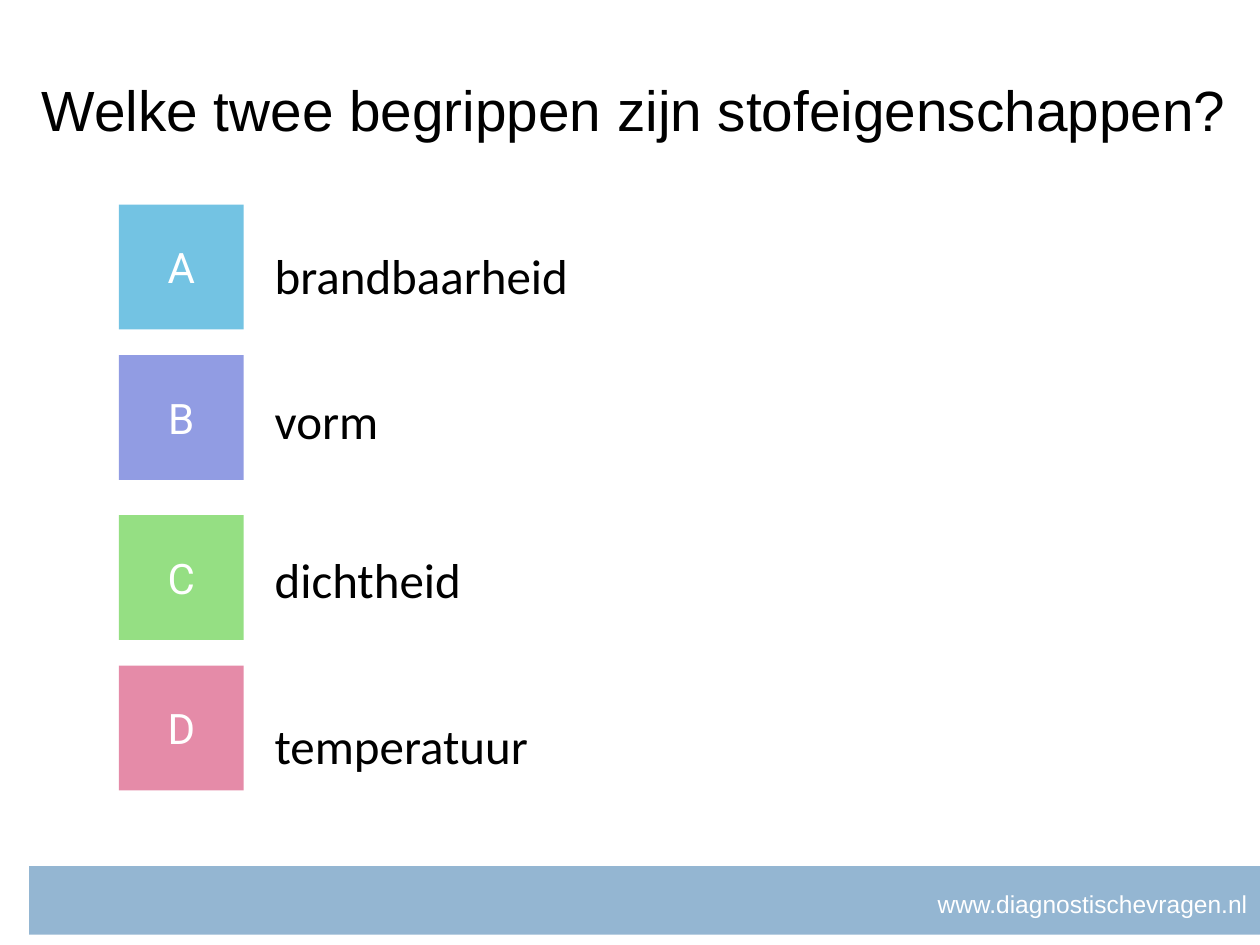
from dataclasses import dataclass

from pptx import Presentation
from pptx.dml.color import RGBColor
from pptx.enum.shapes import MSO_SHAPE
from pptx.enum.text import MSO_ANCHOR, PP_ALIGN
from pptx.util import Pt

RECT = MSO_SHAPE.RECTANGLE
TOP, MIDDLE = MSO_ANCHOR.TOP, MSO_ANCHOR.MIDDLE
LEFT, CENTER, RIGHT = PP_ALIGN.LEFT, PP_ALIGN.CENTER, PP_ALIGN.RIGHT


@dataclass(frozen=True)
class Theme:
    ink: str = "000000"
    paper: str = "FFFFFF"
    band: str = "94B6D2"
    tiles: tuple = ("73C3E3", "919CE3", "95DF83", "E58BA8")
    head: tuple = ("Arial", 32.4)
    answer: tuple = ("Calibri", 28)
    letter: tuple = ("Roboto", 24)
    site: tuple = ("Arial", 14)


class Deck:
    """Holds the theme and the slide being drawn; lengths are in points."""

    def __init__(self, theme):
        self.theme = theme
        self.file = Presentation()
        self.file.slide_width, self.file.slide_height = Pt(720), Pt(540)
        self.slide = self.file.slides.add_slide(self.file.slide_layouts[5])

    def set_text(self, shape, text, style, color, align=LEFT, anchor=MIDDLE,
                 inset=(7.2, 3.6), space=None):
        """Fill a shape with one line; inset is (sides, top and bottom)."""
        frame = shape.text_frame
        frame.text = text
        frame.word_wrap = True
        frame.vertical_anchor = anchor
        frame.margin_left = frame.margin_right = Pt(inset[0])
        frame.margin_top = frame.margin_bottom = Pt(inset[1])
        line = frame.paragraphs[0]
        line.alignment = align
        if space:
            line.line_spacing = space
        font = line.runs[0].font
        font.name, font.size = style[0], Pt(style[1])
        font.color.rgb = RGBColor.from_string(color)

    def title(self, text, x, y, w, h):
        shape = self.slide.shapes.title
        shape.left, shape.top, shape.width, shape.height = map(Pt, (x, y, w, h))
        self.set_text(shape, text, self.theme.head, self.theme.ink,
                      anchor=TOP, inset=(7.2, 7.6), space=1.11)

    def block(self, x, y, w, h, fill):
        shape = self.slide.shapes.add_shape(RECT, *map(Pt, (x, y, w, h)))
        shape.shadow.inherit = False
        shape.fill.solid()
        shape.fill.fore_color.rgb = RGBColor.from_string(fill)
        shape.line.fill.background()
        return shape

    def tile(self, letter, x, y, side, fill):
        self.set_text(self.block(x, y, side, side, fill), letter,
                      self.theme.letter, self.theme.paper, CENTER)

    def label(self, text, x, y, w, h, style, color, **form):
        box = self.slide.shapes.add_textbox(*map(Pt, (x, y, w, h)))
        self.set_text(box, text, style, color, **form)


def main():
    theme = Theme()
    deck = Deck(theme)
    deck.block(16.6, 494.9, 703.4, 39.2, theme.band)
    deck.title("Welke twee begrippen zijn stofeigenschappen?",
               16.6, 31, 703.4, 67.7)

    # letter, answer, top of tile, top of answer
    rows = (
        ("A", "brandbaarheid", 116.9, 131.8),
        ("B", "vorm", 202.9, 214.6),
        ("C", "dichtheid", 294.3, 305.3),
        ("D", "temperatuur", 380.3, 400.3),
    )
    for (letter, answer, top, mid), fill in zip(rows, theme.tiles):
        deck.label(answer, 154.1, mid, 484.6, 43.9, theme.answer, theme.ink,
                   inset=(2.9, 2.9), space=1.2)
        deck.tile(letter, 67.9, top, 71.4, fill)

    deck.label("www.diagnostischevragen.nl", 480.2, 504.7, 239.8, 24.5,
               theme.site, theme.paper, align=RIGHT, anchor=TOP)
    deck.file.save("out.pptx")


if __name__ == "__main__":
    main()
